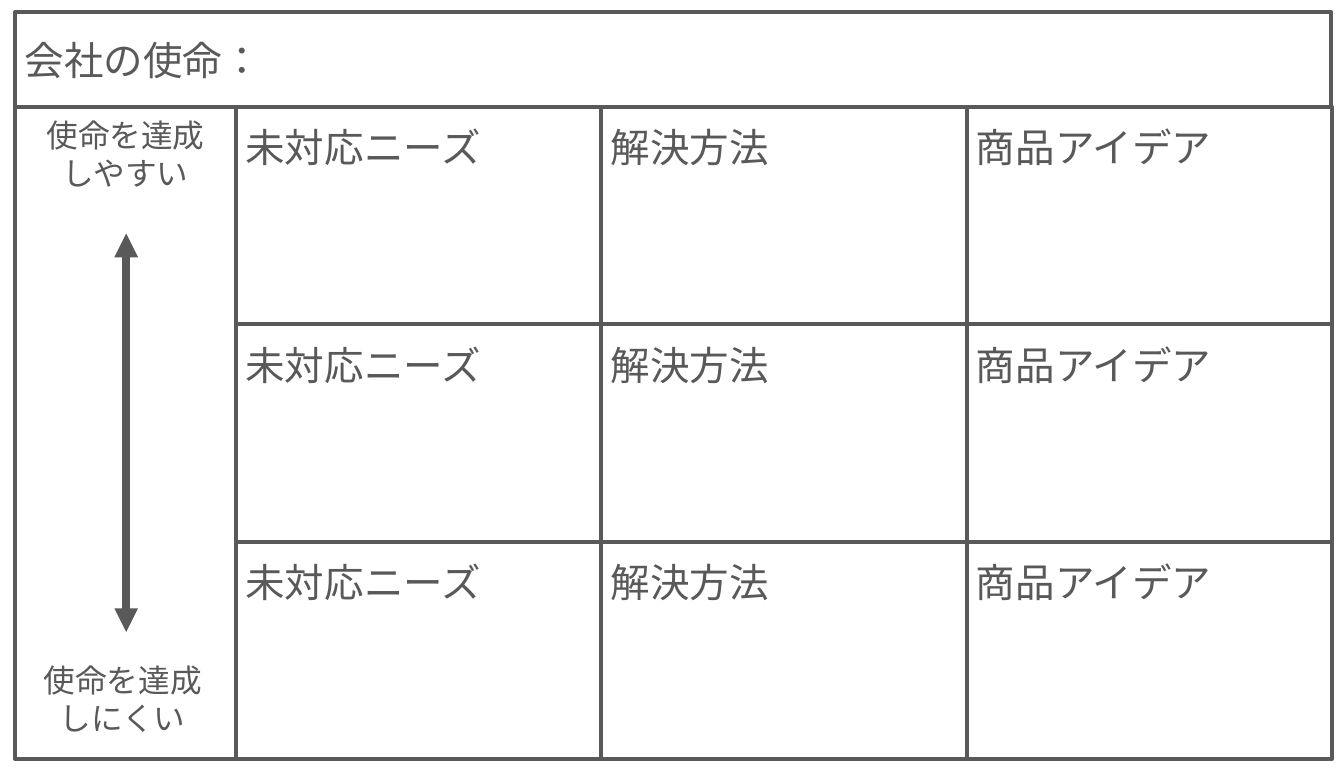
"""Build a planning grid that ranks product ideas by how well they serve the company mission."""
from dataclasses import dataclass

from lxml.etree import SubElement
from pptx import Presentation
from pptx.dml.color import RGBColor
from pptx.enum.lang import MSO_LANGUAGE_ID
from pptx.enum.shapes import MSO_CONNECTOR, MSO_SHAPE
from pptx.enum.text import MSO_ANCHOR, MSO_AUTO_SIZE, PP_ALIGN
from pptx.oxml.ns import qn
from pptx.util import Pt


@dataclass(frozen=True)
class Theme:
    ink: RGBColor = RGBColor(0x59, 0x59, 0x59)
    paper: RGBColor = RGBColor(0xFF, 0xFF, 0xFF)
    font: str = "Arial"
    heading_size: float = 30
    label_size: float = 24
    border: float = 3
    arrow: float = 6
    inset: float = 7.2


@dataclass(frozen=True)
class Box:
    left: float
    top: float
    width: float
    height: float


@dataclass(frozen=True)
class Label:
    box: Box
    lines: tuple[str, ...]


THEME = Theme()
SLIDE_WIDTH, SLIDE_HEIGHT = 1020, 585
MISSION = Box(11.6, 9, 998.6, 72)
SCALE = Box(11.6, 81, 167.3, 495)
FIRST_CELL = Box(179.2, 81, 277.2, 165)
ROW_COUNT = 3
COLUMN_TITLES = ("未対応ニーズ", "解決方法", "商品アイデア")
SCALE_LABELS = (
    Label(Box(11.6, 81, 167.3, 82), ("使命を達成", "しやすい")),
    Label(Box(9.4, 494, 167.3, 82), ("使命を達成", "しにくい")),
)
ARROW_X, ARROW_TOP, ARROW_BOTTOM = 95.8, 177.2, 479.6


def apply_format(target: object, values: dict[str, object]) -> None:
    for name, value in values.items():
        setattr(target, name, value)


def place(shape, box: Box) -> None:
    apply_format(shape, {
        "left": Pt(box.left), "top": Pt(box.top),
        "width": Pt(box.width), "height": Pt(box.height),
    })


def style_panel(shape) -> None:
    shape.shadow.inherit = False
    shape.fill.solid()
    shape.fill.fore_color.rgb = THEME.paper
    shape.line.color.rgb = THEME.ink
    shape.line.width = Pt(THEME.border)


def write_text(shape, lines: tuple[str, ...], size: float, alignment: PP_ALIGN,
               anchor: MSO_ANCHOR, spacing: float = 1.0) -> None:
    frame = shape.text_frame
    frame.text = "\n".join(lines)
    inset = Pt(THEME.inset)
    apply_format(frame, {
        "word_wrap": True, "auto_size": MSO_AUTO_SIZE.NONE, "vertical_anchor": anchor,
        "margin_left": inset, "margin_right": inset,
        "margin_top": inset, "margin_bottom": inset,
    })
    for paragraph in frame.paragraphs:
        apply_format(paragraph, {"alignment": alignment, "line_spacing": spacing})
        for run in paragraph.runs:
            apply_format(run.font, {
                "name": THEME.font, "size": Pt(size), "language_id": MSO_LANGUAGE_ID.JAPANESE,
            })
            run.font.color.rgb = THEME.ink


def add_panel(slide, box: Box):
    shape = slide.shapes.add_shape(MSO_SHAPE.RECTANGLE, 0, 0, 0, 0)
    place(shape, box)
    style_panel(shape)
    return shape


def add_mission(slide) -> None:
    title = slide.shapes.title
    place(title, MISSION)
    style_panel(title)
    write_text(title, ("会社の使命：",), THEME.heading_size, PP_ALIGN.LEFT, MSO_ANCHOR.MIDDLE)


def add_grid(slide) -> None:
    for row in range(ROW_COUNT):
        for column, heading in enumerate(COLUMN_TITLES):
            cell = add_panel(slide, Box(
                FIRST_CELL.left + column * FIRST_CELL.width,
                FIRST_CELL.top + row * FIRST_CELL.height,
                FIRST_CELL.width, FIRST_CELL.height,
            ))
            write_text(cell, (heading,), THEME.heading_size, PP_ALIGN.LEFT, MSO_ANCHOR.TOP, 1.15)


def add_scale(slide) -> None:
    add_panel(slide, SCALE)
    for label in SCALE_LABELS:
        text_box = slide.shapes.add_textbox(0, 0, 0, 0)
        place(text_box, label.box)
        write_text(text_box, label.lines, THEME.label_size, PP_ALIGN.CENTER, MSO_ANCHOR.TOP)
    arrow = slide.shapes.add_connector(
        MSO_CONNECTOR.STRAIGHT, Pt(ARROW_X), Pt(ARROW_TOP), Pt(ARROW_X), Pt(ARROW_BOTTOM))
    arrow.line.color.rgb = THEME.ink
    arrow.line.width = Pt(THEME.arrow)
    properties = arrow.element.spPr
    line = properties.find(qn("a:ln"))
    for end in ("a:headEnd", "a:tailEnd"):
        SubElement(line, qn(end), type="triangle")
    SubElement(properties, qn("a:effectLst"))


def main() -> None:
    presentation = Presentation()
    apply_format(presentation, {"slide_width": Pt(SLIDE_WIDTH), "slide_height": Pt(SLIDE_HEIGHT)})
    slide = presentation.slides.add_slide(presentation.slide_layouts.get_by_name("Title Only"))
    add_mission(slide)
    add_grid(slide)
    add_scale(slide)
    presentation.save("out.pptx")


if __name__ == "__main__":
    main()
